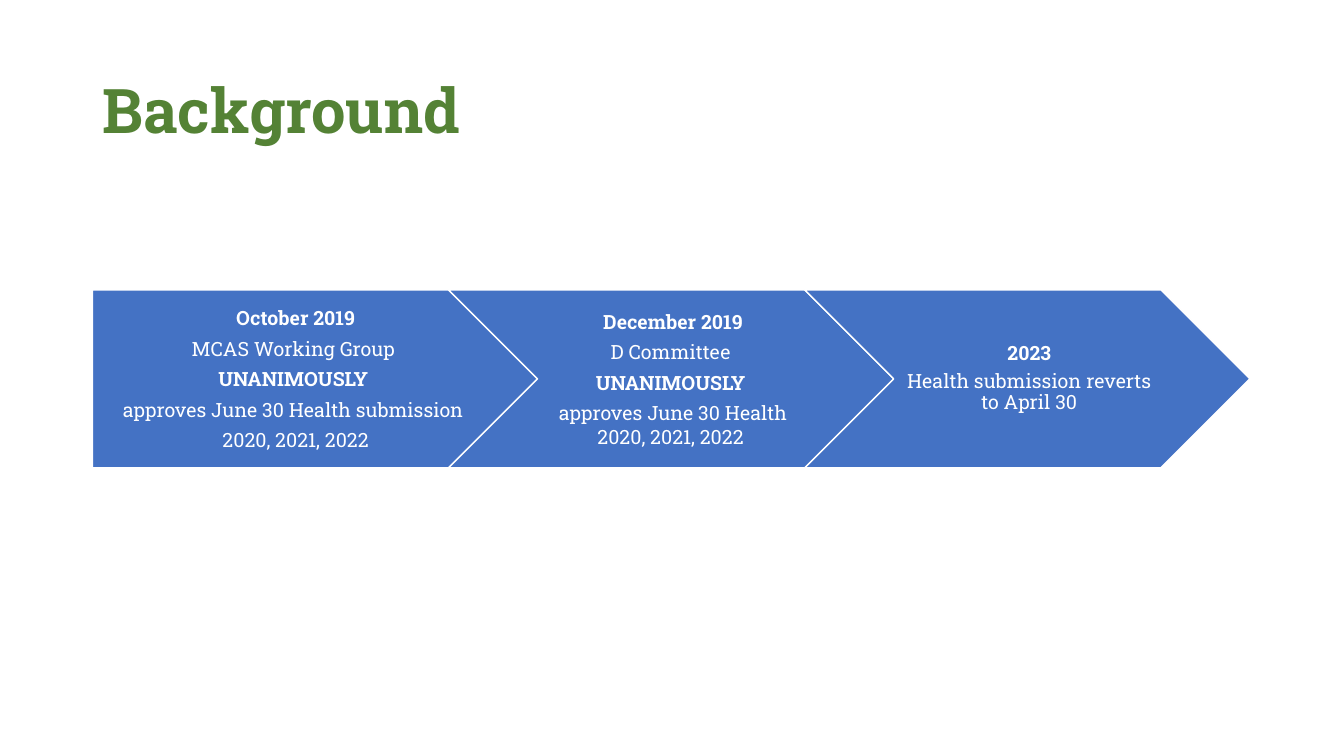
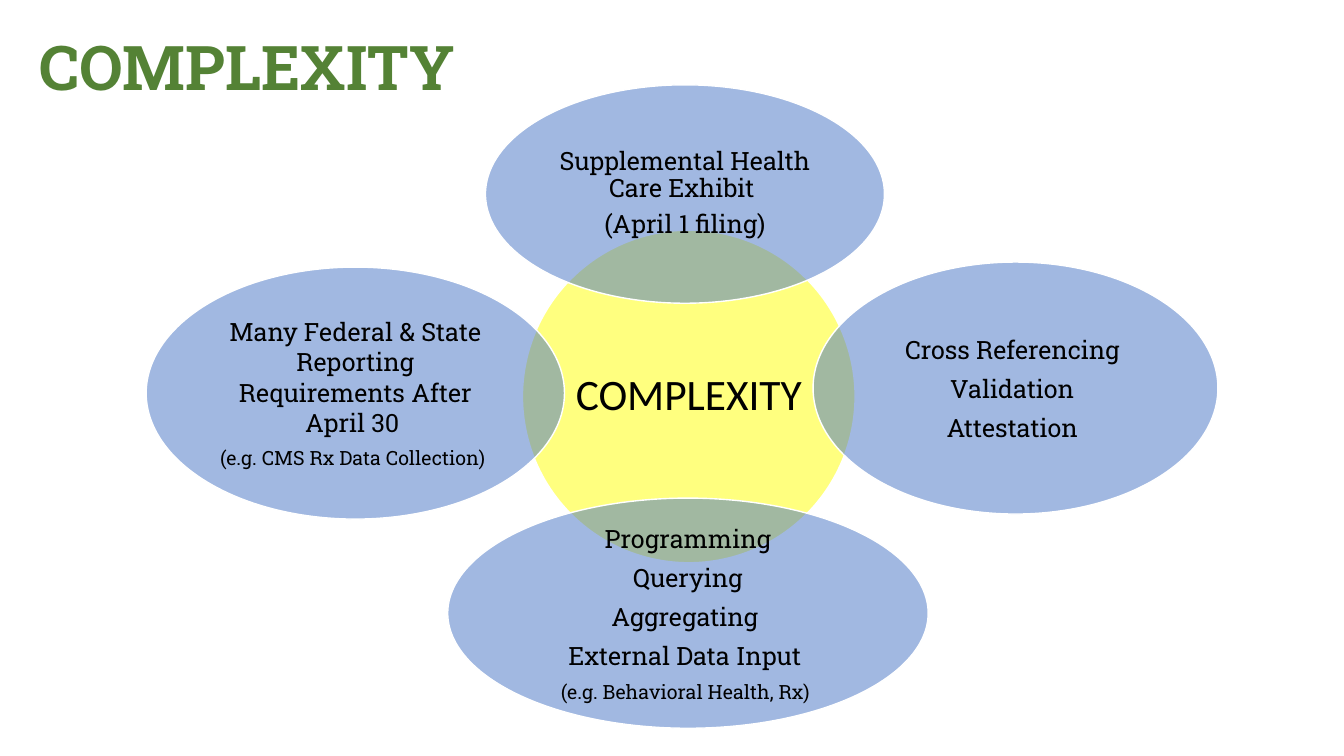
import pptx
import pptx.dml.color
import pptx.enum.shapes
import pptx.enum.text
import pptx.oxml.ns
import pptx.util
from lxml import etree

SHAPE = pptx.enum.shapes.MSO_SHAPE
ALIGN = pptx.enum.text.PP_ALIGN
BOLD = {"bold": True}
SMALL = {"size": 14}


def color(value):
    return pptx.dml.color.RGBColor.from_string(value)


def apply(target, values):
    for name, value in values.items():
        setattr(target, name, value)


class Deck:
    COLUMNS, ROWS = 80, 45
    CELL = pptx.util.Inches(1) / 6
    FONT = "Roboto Slab"
    GREEN, BLUE, YELLOW = "548235", "4472C4", "FFFF00"
    WHITE, BLACK = "FFFFFF", "000000"
    SPACE_AFTER = 0.35

    def __init__(self):
        self.deck = pptx.Presentation()
        self.deck.slide_width = self.cells(self.COLUMNS)
        self.deck.slide_height = self.cells(self.ROWS)
        self.slide = None

    def cells(self, count):
        return pptx.util.Emu(round(count * self.CELL))

    def place(self, area):
        return [self.cells(length) for length in area]

    def page(self, title, area):
        self.slide = self.deck.slides.add_slide(self.deck.slide_layouts[5])
        box = self.slide.shapes.title
        apply(box, dict(zip(("left", "top", "width", "height"), self.place(area))))
        self.frame(box, {})
        para = box.text_frame.paragraphs[0]
        apply(para, {"alignment": ALIGN.LEFT, "line_spacing": 0.9})
        self.span(para, title, self.GREEN, {"size": 44, "bold": True})

    def frame(self, box, insets):
        apply(box.text_frame, {
            "word_wrap": True,
            "auto_size": pptx.enum.text.MSO_AUTO_SIZE.NONE,
            "vertical_anchor": pptx.enum.text.MSO_ANCHOR.MIDDLE,
            **insets,
        })

    def span(self, para, text, text_color, values):
        span = para.add_run()
        span.text = text
        style = {"name": self.FONT, "bold": False, **values}
        style["size"] = pptx.util.Pt(style["size"])
        apply(span.font, style)
        span.font.color.rgb = color(text_color)

    def shape(self, kind, area, fill, insets, opacity=100):
        box = self.slide.shapes.add_shape(kind, *self.place(area))
        box.shadow.inherit = False
        box.fill.solid()
        box.fill.fore_color.rgb = color(fill)
        if opacity < 100:
            tone = box.element.spPr.find(".//" + pptx.oxml.ns.qn("a:srgbClr"))
            alpha = etree.SubElement(tone, pptx.oxml.ns.qn("a:alpha"))
            alpha.set("val", str(opacity * 1000))
        box.line.color.rgb = color(self.WHITE)
        box.line.width = pptx.util.Pt(1)
        sides = ("margin_left", "margin_top", "margin_right", "margin_bottom")
        self.frame(box, dict(zip(sides, self.place(insets))))
        return box

    def label(self, box, lines, text_color, base, spacing):
        for index, (text, values) in enumerate(lines):
            frame = box.text_frame
            para = frame.add_paragraph() if index else frame.paragraphs[0]
            style = {**base, **values}
            apply(para, {
                "alignment": ALIGN.CENTER,
                "line_spacing": spacing,
                "space_after": pptx.util.Pt(self.SPACE_AFTER * style["size"]),
            })
            self.span(para, text, text_color, style)

    def arrow(self, kind, area, inset, lines, spacing=1.0):
        box = self.shape(kind, area, self.BLUE, (inset, 0.24, 0.12, 0.24))
        self.label(box, lines, self.WHITE, {"size": 14}, spacing)

    def hub(self, area, text):
        box = self.shape(SHAPE.OVAL, area, self.YELLOW, [0.24] * 4, 50)
        self.label(box, [(text, {})], self.BLACK, {"size": 31, "name": "Calibri"}, 0.9)

    def petal(self, area, lines, spacing=1.0):
        box = self.shape(SHAPE.OVAL, area, self.BLUE, [0.18] * 4, 50)
        self.label(box, lines, self.BLACK, {"size": 18}, spacing)


def add_background(deck):
    deck.page("Background", (5.5, 2.4, 69, 8.7))
    left, top, width, height = 5.5, 17.25, 26.5, 10.6
    step = width - height / 2
    stages = [
        (SHAPE.PENTAGON, 0.48, 1.0, [
            ("October 2019", BOLD),
            ("MCAS Working Group ", {}),
            ("UNANIMOUSLY ", BOLD),
            ("approves June 30 Health submission ", {}),
            ("2020, 2021, 2022", {}),
        ]),
        (SHAPE.CHEVRON, 0.36, 1.0, [
            ("December 2019", BOLD),
            ("D Committee ", {}),
            ("UNANIMOUSLY ", BOLD),
            ("approves June 30 Health 2020, 2021, 2022 ", {}),
        ]),
        (SHAPE.CHEVRON, 0.36, 0.9, [
            ("2023", BOLD),
            ("Health submission reverts to April 30", {}),
        ]),
    ]
    for index, (kind, inset, spacing, lines) in enumerate(stages):
        area = (left + index * step, top, width, height)
        deck.arrow(kind, area, inset, lines, spacing)


def add_complexity(deck):
    deck.page("COMPLEXITY", (1.75, 1.4, 69, 5.6))
    deck.hub((31.1, 13.7, 19.8, 19.8), "COMPLEXITY ")
    deck.petal((28.9, 5.05, 23.75, 13), [
        ("Supplemental Health Care Exhibit ", {}),
        ("(April 1 filing)", {}),
    ], 0.9)
    deck.petal((48.4, 15.6, 24.1, 15), [
        ("Cross Referencing ", {}),
        ("Validation ", {}),
        ("Attestation ", {}),
    ])
    deck.petal((26.65, 29.65, 28.6, 13.7), [
        ("Programming", {}),
        ("Querying", {}),
        ("Aggregating ", {}),
        ("External Data Input ", {}),
        ("(e.g. Behavioral Health, Rx) ", SMALL),
    ])
    deck.petal((8.7, 15.9, 24.9, 15), [
        ("Many Federal & State Reporting Requirements After April 30 ", {}),
        ("(e.g. CMS Rx Data Collection) ", SMALL),
    ])


def main():
    deck = Deck()
    add_background(deck)
    add_complexity(deck)
    deck.deck.save("out.pptx")


if __name__ == "__main__":
    main()
